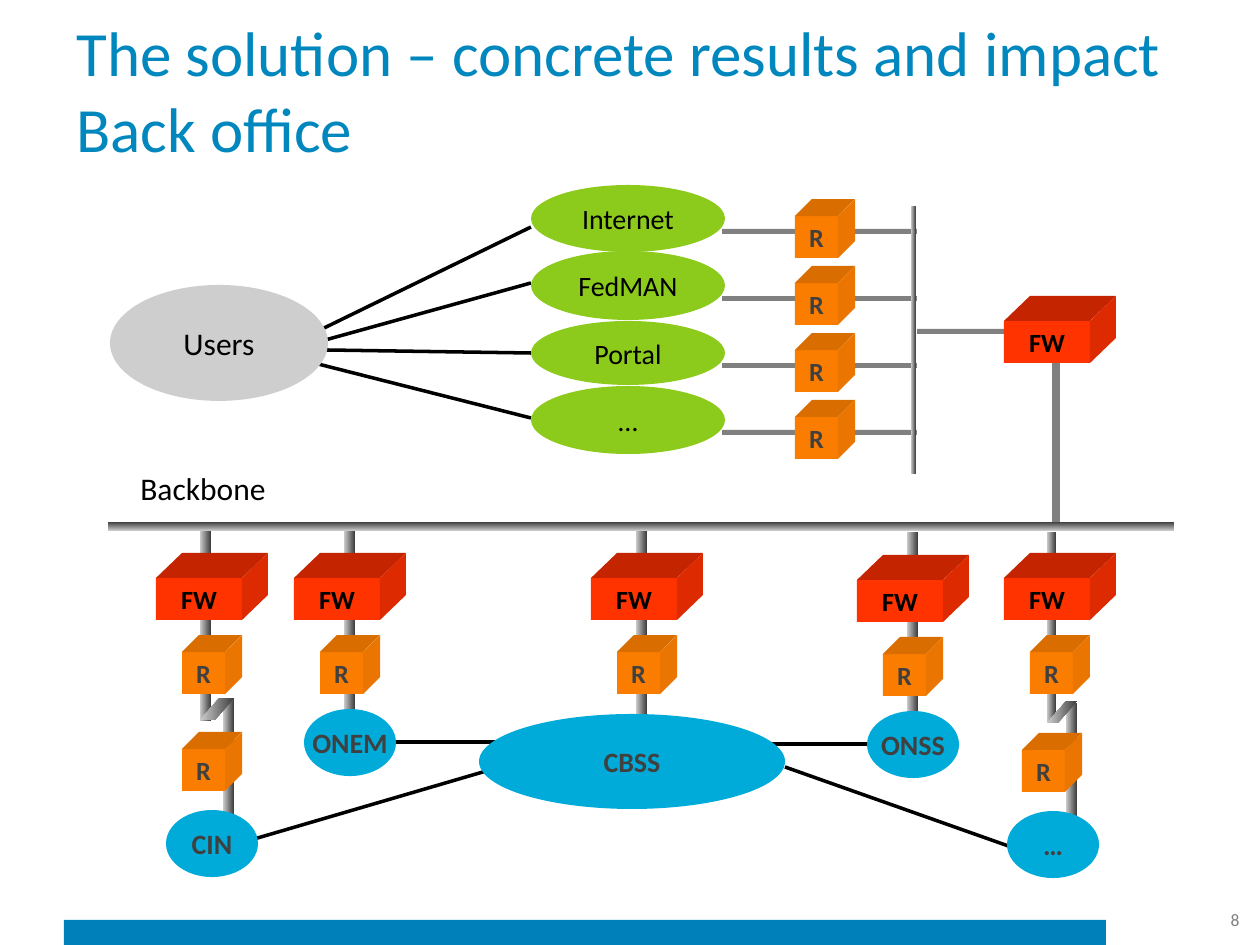
"""Build the back office network slide."""
from lxml import etree
from pptx import Presentation
from pptx import util as u
from pptx.dml.color import RGBColor
from pptx.enum import shapes, text
from pptx.oxml.ns import qn

SCALE = u.Inches(1) / 126
FONT = "Calibri"

WHITE = RGBColor(0xFF, 0xFF, 0xFF)
BLACK = RGBColor(0, 0, 0)
CHARCOAL = RGBColor(0x40, 0x40, 0x40)
GREY = RGBColor(0x80, 0x80, 0x80)
SILVER = RGBColor(0xCE, 0xCE, 0xCE)
STEEL = RGBColor(0x3D, 0x3D, 0x3D)
FOOTER_BLUE = RGBColor(0x00, 0x80, 0xBB)
TITLE_BLUE = RGBColor(0x00, 0x87, 0xBE)
CYAN = RGBColor(0x00, 0xAB, 0xDA)
GREEN = RGBColor(0x8C, 0xCA, 0x1C)

RECT = shapes.MSO_SHAPE.RECTANGLE
OVAL = shapes.MSO_SHAPE.OVAL
SLANT = shapes.MSO_SHAPE.PARALLELOGRAM
CENTER, RIGHT, LEFT = text.PP_ALIGN.CENTER, text.PP_ALIGN.RIGHT, text.PP_ALIGN.LEFT
MIDDLE, TOP = text.MSO_ANCHOR.MIDDLE, text.MSO_ANCHOR.TOP

TEXTS = [
    ("The solution – concrete results and impact Back office",
     (64, 26, 1134, 127), 36, TITLE_BLUE, LEFT, MIDDLE),
    ("8", (1149, 895, 103, 50), 10, GREY, RIGHT, MIDDLE),
    ("Backbone", (128, 463, 251, 50), 18, BLACK, LEFT, TOP),
]

CUBES = {
    "FW": dict(front=(86, 42), depth=(26, 25), ink=BLACK,
               fills=(RGBColor(0xFF, 0x33, 0), RGBColor(0xC4, 0x25, 0), RGBColor(0xDE, 0x2A, 0))),
    "R": dict(front=(43, 42), depth=(17, 17), ink=CHARCOAL,
              fills=(RGBColor(0xFA, 0x7D, 0), RGBColor(0xDA, 0x6D, 0), RGBColor(0xEA, 0x75, 0))),
}
COLUMNS = [(156, 553), (294, 553), (591, 553), (857, 555), (1004, 553)]
ROUTER_OFFSET = (26, 82)
LOWER_ROUTERS = [(182, 732), (1022, 733)]
GATEWAY = (1004, 296)

NETWORKS = [("Internet", 185, 67), ("FedMAN", 251, 69), ("Portal", 321, 64), ("…", 386, 68)]
NETWORK_LEFT, NETWORK_WIDTH = 531, 194
ROUTER_LEFT, ROUTER_TOP, ROUTER_STEP, RAIL_DROP = 795, 199, 67, 30

USERS = ("Users", (110, 285, 218, 116))
MEMBERS = [
    ("ONEM", (304, 709, 92, 67)),
    ("CIN", (166, 810, 92, 67)),
    ("…", (1007, 811, 92, 67)),
    ("ONSS", (867, 711, 92, 67)),
    ("CBSS", (479, 714, 306, 95)),
]

PIPES = [
    (1047, 532, 9, 190), (636, 530, 11, 234),
    (223, 703, 11, 101), (223, 698, 11, 156), (1066, 703, 11, 156),
]
SPLIT_PIPES = [(200, 531), (344, 531), (907, 532)]
SPLIT_SHIFT, SPLIT_SIZE = 34, (11, 156)
ELBOWS = [(200, 698, 34, 22), (1047, 701, 30, 22)]
BUS = (911, 206, 5, 268)
BACKBONE = (108, 522, 1066, 9)
GATEWAY_LINKS = [(917, 329, 195, 5), (1052, 363, 8, 168)]

LINKS = [
    (500, 742, 370, 742), (785, 767, 1014, 848), (500, 767, 244, 842), (886, 744, 756, 744),
    (318, 331, 531, 227), (318, 342, 531, 283), (326, 350, 531, 353), (318, 364, 531, 418),
]


def px(*values):
    return [u.Emu(round(value * SCALE)) for value in values]


def assign(target, values):
    for name, value in values.items():
        setattr(target, name, value)


def write(shape, words, size, color, align=CENTER, anchor=MIDDLE, bold=False, wrap=False):
    frame = shape.text_frame
    assign(frame, dict(word_wrap=wrap, vertical_anchor=anchor))
    para = frame.paragraphs[0]
    para.alignment = align
    span = para.add_run()
    span.text = words
    assign(span.font, dict(name=FONT, size=u.Pt(size), bold=bold))
    span.font.color.rgb = color


def paint(shape, color):
    shape.fill.solid()
    shape.fill.fore_color.rgb = color
    shape.line.fill.background()
    shape.shadow.inherit = False
    return shape


def add_block(page, kind, place, color):
    return paint(page.shapes.add_shape(kind, *px(*place)), color)


def add_metal(page, place, kind=RECT, colors=(SILVER, STEEL), angle=0):
    shape = add_block(page, kind, place, GREY)
    shape.fill.gradient()
    shape.fill.gradient_angle = angle
    for stop, color in zip(shape.fill.gradient_stops, colors):
        stop.color.rgb = color
    return shape


def add_face(page, points, color):
    builder = page.shapes.build_freeform(*points[0], scale=SCALE)
    builder.add_line_segments(points[1:], close=True)
    paint(builder.convert_to_shape(), color)


def add_cube(page, label, left, top):
    cube = CUBES[label]
    (width, height), (dx, dy) = cube["front"], cube["depth"]
    front, lid, side = cube["fills"]
    right, edge, bottom = left + width, top + dy, top + dy + height
    box = add_block(page, RECT, (left, edge, width, height), front)
    pad_x, pad_y = px(10, 5)
    assign(box.text_frame, dict(margin_left=pad_x, margin_right=pad_x,
                                margin_top=pad_y, margin_bottom=pad_y))
    write(box, label, 15, cube["ink"], bold=True)
    add_face(page, [(left, edge), (left + dx, top), (right + dx, top), (right, edge)], lid)
    add_face(page, [(right, edge), (right + dx, top), (right + dx, bottom - dy),
                    (right, bottom)], side)


def add_link(page, ends):
    link = page.shapes.add_connector(shapes.MSO_CONNECTOR.STRAIGHT, *px(*ends))
    link.line.color.rgb = BLACK
    link.line.width = u.Pt(2)
    etree.SubElement(link._element.spPr, qn("a:effectLst"))


def main():
    deck = Presentation()
    assign(deck, dict(slide_width=u.Inches(10), slide_height=u.Inches(7.5)))
    page = deck.slides.add_slide(deck.slide_layouts[6])
    page.background.fill.solid()
    page.background.fill.fore_color.rgb = WHITE

    add_block(page, RECT, (64, 920, 1042, 25), FOOTER_BLUE)
    for words, place, size, color, align, anchor in TEXTS:
        box = page.shapes.add_textbox(*px(*place))
        write(box, words, size, color, align, anchor, wrap=True)

    for place in PIPES:
        add_metal(page, place)
    for left, top in SPLIT_PIPES:
        for shift in (SPLIT_SHIFT, 0):
            add_metal(page, (left, top + shift, *SPLIT_SIZE))
    for place in ELBOWS:
        add_metal(page, place, SLANT).adjustments[0] = 0.88
    for ends in LINKS:
        add_link(page, ends)

    for place in GATEWAY_LINKS:
        add_block(page, RECT, place, GREY)
    for row, (name, top, height) in enumerate(NETWORKS):
        router_top = ROUTER_TOP + row * ROUTER_STEP
        add_block(page, RECT, (722, router_top + RAIL_DROP, 195, 5), GREY)
        add_cube(page, "R", ROUTER_LEFT, router_top)
        oval = add_block(page, OVAL, (NETWORK_LEFT, top, NETWORK_WIDTH, height), GREEN)
        write(oval, name, 16, BLACK)
    add_metal(page, BUS)
    add_metal(page, BACKBONE, colors=(STEEL, SILVER), angle=270)

    name, place = USERS
    write(add_block(page, OVAL, place, SILVER), name, 18, BLACK)
    for name, place in MEMBERS:
        write(add_block(page, OVAL, place, CYAN), name, 16, CHARCOAL, bold=True)

    for left, top in [GATEWAY, *COLUMNS]:
        add_cube(page, "FW", left, top)
    dx, dy = ROUTER_OFFSET
    for left, top in [(x + dx, y + dy) for x, y in COLUMNS] + LOWER_ROUTERS:
        add_cube(page, "R", left, top)

    deck.save("out.pptx")


if __name__ == "__main__":
    main()
